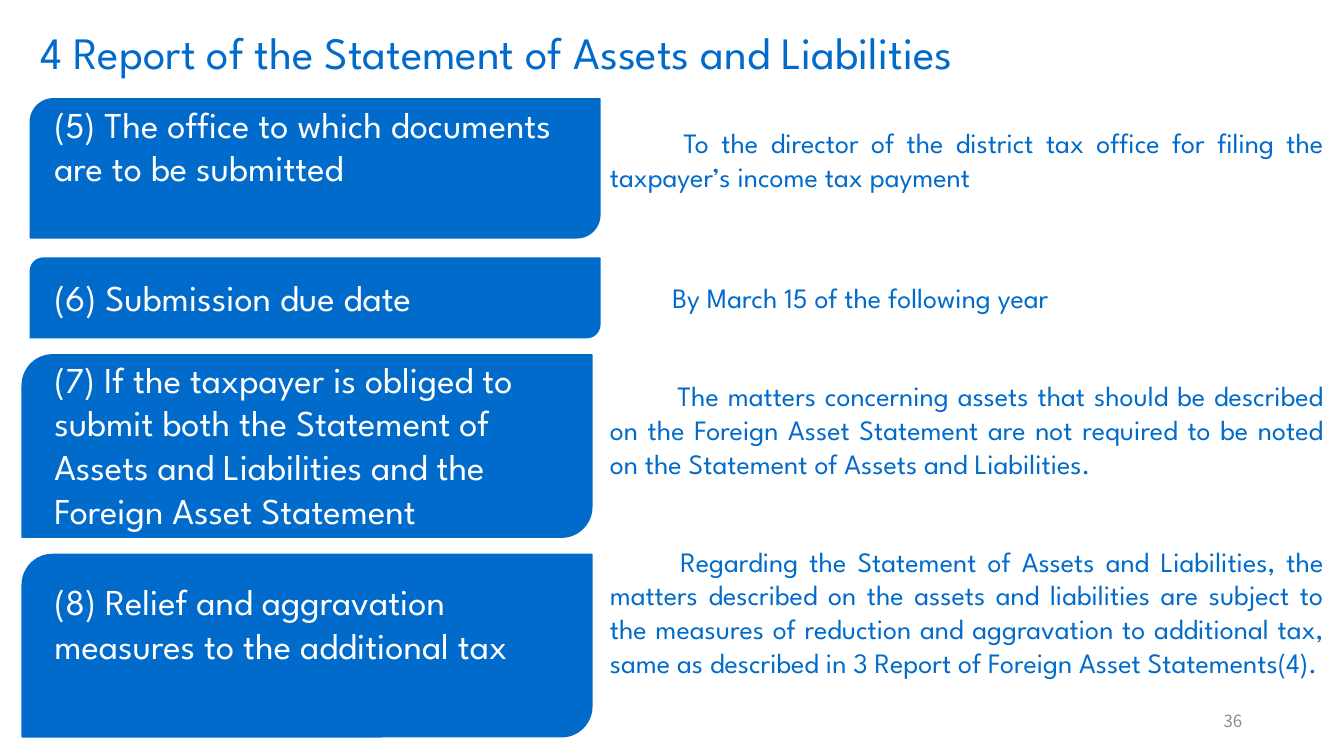
from pptx import Presentation
from pptx.dml.color import RGBColor
from pptx.enum.shapes import MSO_SHAPE as Shape
from pptx.enum.text import MSO_ANCHOR as Anchor, MSO_AUTO_SIZE as AutoSize, PP_ALIGN as Align
from pptx.util import Inches, Pt

# Content
TITLE = "4 Report of the Statement of Assets and Liabilities"
PAGE_NUMBER = "36"
COLORS = {"blue": "006BCB", "white": "FFFFFF", "gray": "8C8C8C"}
FONT = "League Spartan"
# Each row: panel (left, top, height), label (top, height, text),
# detail (top, height, first-line indent, alignment, text)
ROWS = [
    {"panel": (0.3, 0.98, 1.38),
     "label": (0.96, 1.41, "(5) The office to which documents are to be submitted"),
     "detail": (1.2, 0.77, 0.73, Align.JUSTIFY,
                "To the director of the district tax office for filing the "
                "taxpayer’s income tax payment")},
    {"panel": (0.3, 2.56, 0.79),
     "label": (2.68, 0.54, "(6) Submission due date"),
     "detail": (2.73, 0.44, 0.62, Align.LEFT, "By March 15 of the following year")},
    {"panel": (0.22, 3.52, 1.81),
     "label": (3.49, 1.88,
               "(7) If the taxpayer is obliged to submit both the Statement of "
               "Assets and Liabilities and the Foreign Asset Statement"),
     "detail": (3.71, 1.45, 0.67, Align.JUSTIFY,
                "The matters concerning assets that should be described on the "
                "Foreign Asset Statement are not required to be noted on the "
                "Statement of Assets and Liabilities.")},
    {"panel": (0.22, 5.5, 1.81),
     "label": (5.7, 1.41, "(8) Relief and aggravation measures to the additional tax"),
     "detail": (5.35, 2.12, 0.7, Align.JUSTIFY,
                "Regarding the Statement of Assets and Liabilities, the matters "
                "described on the assets and liabilities are subject to the measures "
                "of reduction and aggravation to additional tax, same as described "
                "in 3 Report of Foreign Asset Statements(4).")},
]

# Columns
PANEL_WIDTH = 5.65
LABEL_LEFT, LABEL_WIDTH = 0.44, 5.5
DETAIL_LEFT, DETAIL_WIDTH = 5.95, 7.28


def write_text(shape, text, *, size, color, font=FONT, align=Align.LEFT,
               anchor=Anchor.TOP, indent=0):
    frame = shape.text_frame
    frame.word_wrap = True
    frame.auto_size = AutoSize.NONE
    frame.vertical_anchor = anchor
    paragraph = frame.paragraphs[0]
    paragraph.alignment = align
    if indent:
        paragraph._p.get_or_add_pPr().set("indent", str(Inches(indent)))
    run = paragraph.add_run()
    run.text = text
    run.font.name = font
    run.font.size = Pt(size)
    run.font.color.rgb = RGBColor.from_string(COLORS[color])


def add_text(shapes, left, top, width, height, text, **text_format):
    box = shapes.add_textbox(*map(Inches, (left, top, width, height)))
    write_text(box, text, **text_format)


def add_panel(shapes, left, top, height):
    panel = shapes.add_shape(Shape.ROUND_2_DIAG_RECTANGLE,
                             *map(Inches, (left, top, PANEL_WIDTH, height)))
    blue = RGBColor.from_string(COLORS["blue"])
    panel.shadow.inherit = False
    panel.fill.solid()
    panel.fill.fore_color.rgb = blue
    panel.line.color.rgb = blue
    panel.line.width = Pt(1)


def main():
    presentation = Presentation()
    presentation.slide_width = Inches(13.33)
    presentation.slide_height = Inches(7.5)
    slide = presentation.slides.add_slide(presentation.slide_layouts[5])

    # Title
    title = slide.shapes.title
    title.left, title.top, title.width, title.height = map(Inches, (0.3, 0.19, 12.39, 0.64))
    write_text(title, TITLE, size=32, color="blue")

    # Rows: blue panel with its label, and the detail beside it
    for row in ROWS:
        shapes = slide.shapes.add_group_shape().shapes
        add_panel(shapes, *row["panel"])
        top, height, text = row["label"]
        add_text(shapes, LABEL_LEFT, top, LABEL_WIDTH, height, text, size=26, color="white")
        top, height, indent, align, text = row["detail"]
        add_text(shapes, DETAIL_LEFT, top, DETAIL_WIDTH, height, text,
                 size=20, color="blue", align=align, indent=indent)

    # Page number
    add_text(slide.shapes, 9.42, 6.95, 3, 0.4, PAGE_NUMBER, size=12, color="gray",
             font="Noto Sans CJK JP", align=Align.RIGHT, anchor=Anchor.MIDDLE)

    presentation.save("out.pptx")


if __name__ == "__main__":
    main()
